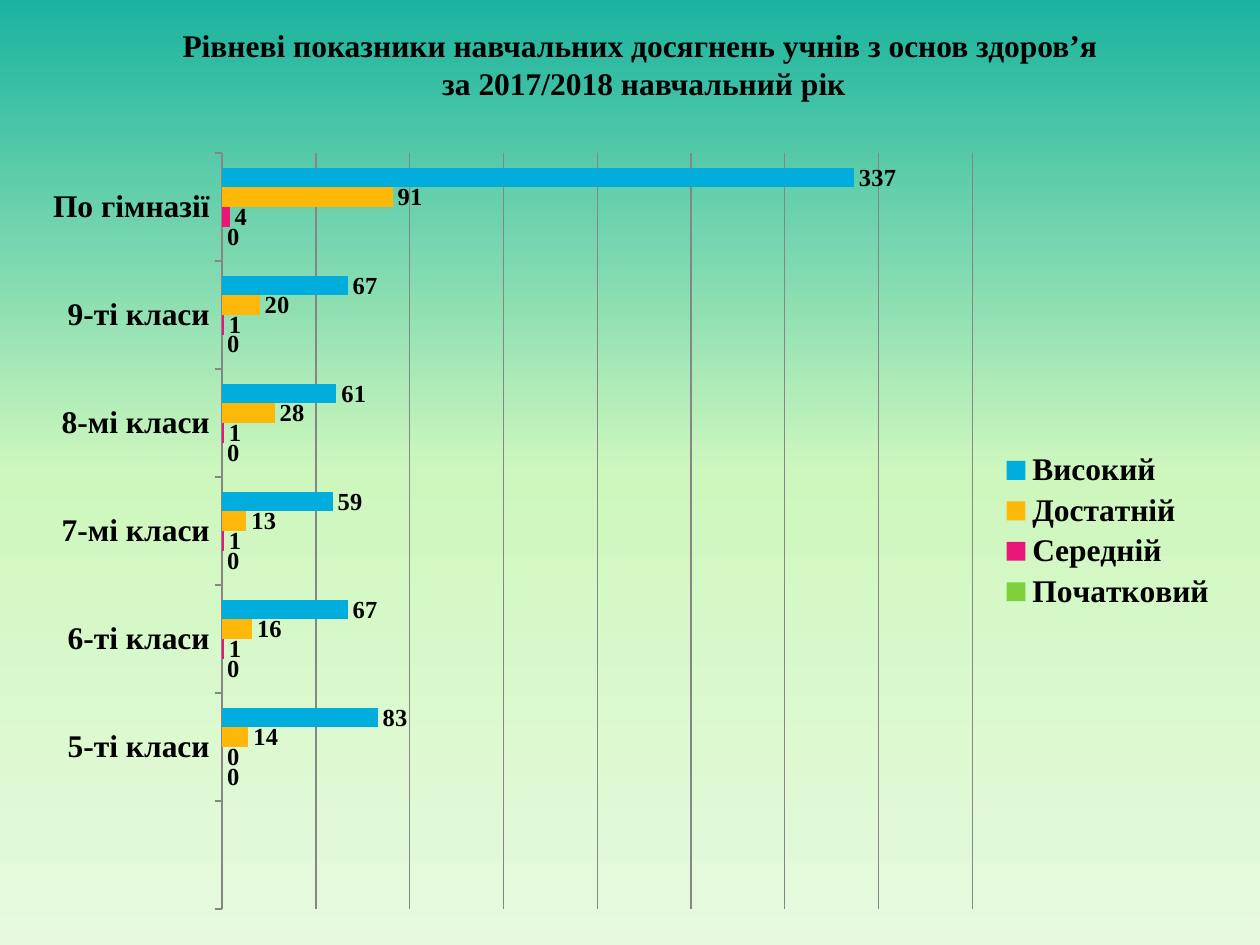
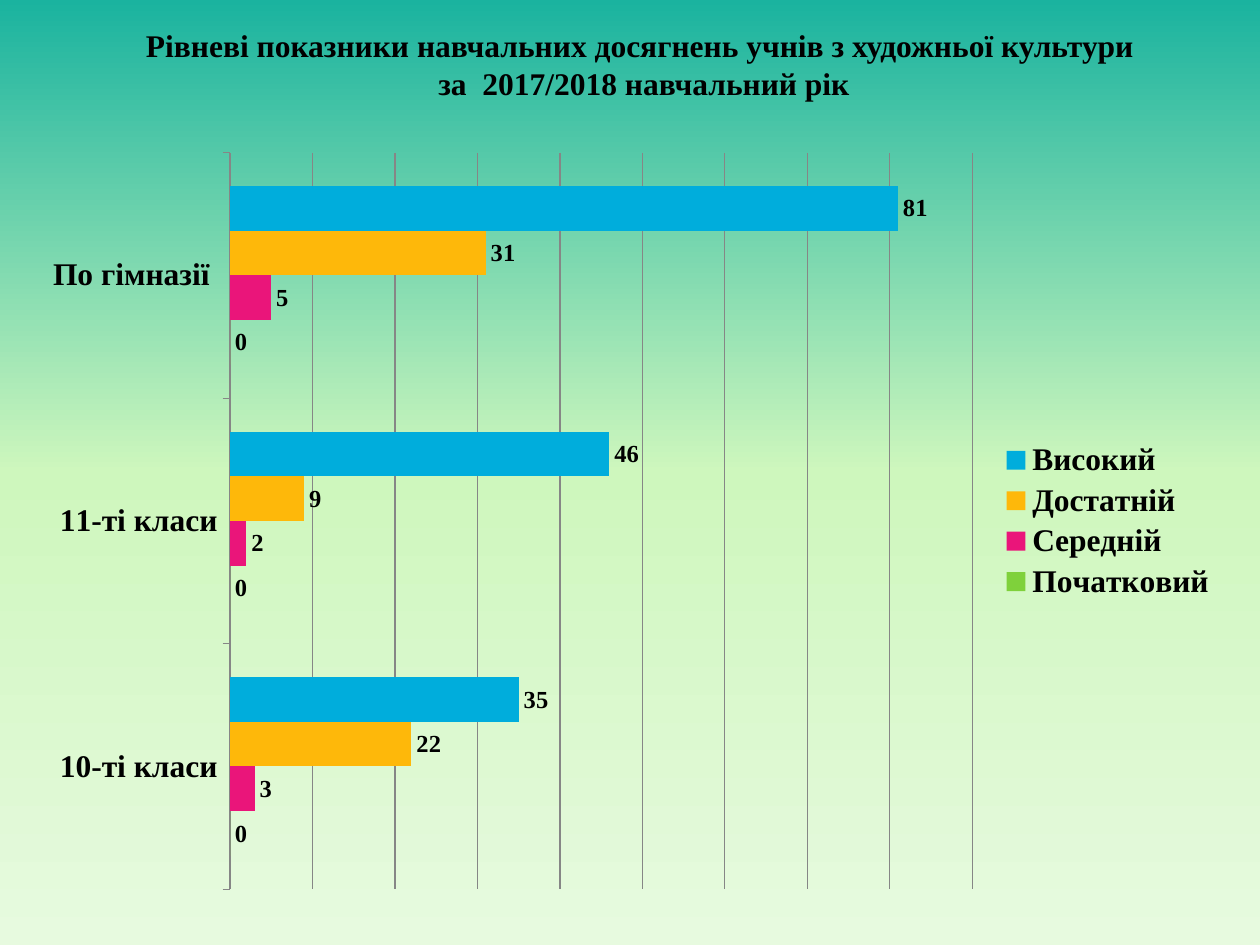
"""Builds two slides with bar charts of pupils' achievement levels."""
from copy import deepcopy

from pptx import Presentation
from pptx.chart.data import CategoryChartData as ChartData
from pptx.dml.color import RGBColor
from pptx.enum.chart import XL_CHART_TYPE as ChartType
from pptx.enum.chart import XL_LABEL_POSITION as LabelPosition
from pptx.enum.chart import XL_LEGEND_POSITION as LegendPosition
from pptx.enum.chart import XL_TICK_MARK as TickMark
from pptx.enum.text import MSO_ANCHOR as Anchor
from pptx.enum.text import MSO_AUTO_SIZE as AutoSize
from pptx.enum.text import PP_ALIGN as Align
from pptx.util import Inches, Pt

BACKGROUND = [(0, "1AB39F"), (0.5, "CEF7BD"), (1, "E7FADF")]
BLACK, GREY = "000000", "868686"
BOLD = {"name": "Times New Roman", "bold": True}
TITLE_FONT = {**BOLD, "size": Pt(18)}
LABEL_FONT = {**BOLD, "size": Pt(14)}
CHART_FONT = {"name": "Calibri", "size": Pt(18)}
TITLE_BOX = (0.47, 0.23, 9.22, 0.55)
LEVELS = [("Початковий", "7FD13B"), ("Середній", "EA157A"),
          ("Достатній", "FEB80A"), ("Високий", "00ADDC")]
SLIDES = [
    {
        "title": "Рівневі показники навчальних досягнень учнів з основ здоров’я"
                 "\v за 2017/2018 навчальний рік",
        "box": (0.23, 1.09, 9.53, 6.25),
        "scale": {"minimum_scale": 0, "maximum_scale": 400, "major_unit": 50},
        "groups": [
            ("", (None, None, None, None)),
            ("5-ті класи", (0, 0, 14, 83)),
            ("6-ті класи", (0, 1, 16, 67)),
            ("7-мі класи", (0, 1, 13, 59)),
            ("8-мі класи", (0, 1, 28, 61)),
            ("9-ті класи", (0, 1, 20, 67)),
            ("По гімназії", (0, 4, 91, 337)),
        ],
    },
    {
        "title": "Рівневі показники навчальних досягнень учнів з художньої культури"
                 "\v за  2017/2018 навчальний рік",
        "box": (0.23, 1.09, 9.53, 6.09),
        "scale": {"minimum_scale": 0, "maximum_scale": 90, "major_unit": 10},
        "groups": [
            ("10-ті класи", (0, 3, 22, 35)),
            ("11-ті класи", (0, 2, 9, 46)),
            ("По гімназії ", (0, 5, 31, 81)),
        ],
    },
]


def color(value):
    """Turn a hex string into a colour."""
    return RGBColor.from_string(value)


def apply(target, values):
    """Set every attribute named in a dict."""
    for name, value in values.items():
        setattr(target, name, value)


def style_font(font, values):
    """Format a font in black."""
    apply(font, values)
    font.color.rgb = color(BLACK)


def style_master(master):
    """Give the master its gradient background and title size."""
    fill = master.background.fill
    fill.gradient()
    fill.gradient_angle = 270
    stops = master.element.xpath(".//p:bg//a:gsLst")[0]
    stops.append(deepcopy(stops[-1]))
    for stop, (position, value) in zip(fill.gradient_stops, BACKGROUND):
        stop.position = position
        stop.color.rgb = color(value)
    master.element.xpath(".//p:titleStyle/a:lvl1pPr/a:defRPr")[0].set("sz", "1800")


def add_title(page, text):
    """Place the title text in its placeholder."""
    title = page.shapes.title
    apply(title, dict(zip(("left", "top", "width", "height"), map(Inches, TITLE_BOX))))
    frame = title.text_frame
    apply(frame, {"vertical_anchor": Anchor.MIDDLE, "auto_size": AutoSize.NONE,
                  "word_wrap": True})
    para = frame.paragraphs[0]
    apply(para, {"text": text, "alignment": Align.CENTER})
    for span in para.runs:
        style_font(span.font, TITLE_FONT)


def add_levels_chart(page, box, groups, scale):
    """Draw one bar per level for every group of classes."""
    data = ChartData()
    data.categories = [name for name, _ in groups]
    for index, (level, _) in enumerate(LEVELS):
        data.add_series(level, [counts[index] for _, counts in groups])
    chart = page.shapes.add_chart(
        ChartType.BAR_CLUSTERED, *map(Inches, box), data).chart
    apply(chart, {"has_title": False, "has_legend": True})
    style_font(chart.font, CHART_FONT)
    apply(chart.legend, {"position": LegendPosition.RIGHT, "include_in_layout": False})
    style_font(chart.legend.font, {**CHART_FONT, **BOLD})

    classes, counts = chart.category_axis, chart.value_axis
    classes.major_tick_mark = TickMark.OUTSIDE
    style_font(classes.tick_labels.font, {**CHART_FONT, **BOLD})
    apply(counts, {**scale, "visible": False, "has_major_gridlines": True})
    for line in (classes.format.line, counts.major_gridlines.format.line):
        line.color.rgb = color(GREY)
        line.width = Pt(0.75)

    plot = chart.plots[0]
    apply(plot, {"gap_width": 150, "overlap": 0, "vary_by_categories": False})
    for series, (_, value) in zip(plot.series, LEVELS):
        series.format.fill.solid()
        series.format.fill.fore_color.rgb = color(value)
        labels = series.data_labels
        apply(labels, {"show_value": True, "position": LabelPosition.OUTSIDE_END})
        style_font(labels.font, LABEL_FONT)


def main():
    """Build and save the deck."""
    deck = Presentation()
    apply(deck, {"slide_width": Inches(10), "slide_height": Inches(7.5)})
    style_master(deck.slide_master)
    for content in SLIDES:
        page = deck.slides.add_slide(deck.slide_layouts[0])
        subtitle = page.placeholders[1].element
        subtitle.getparent().remove(subtitle)
        add_title(page, content["title"])
        add_levels_chart(page, content["box"], content["groups"], content["scale"])
    deck.save("out.pptx")


if __name__ == "__main__":
    main()
